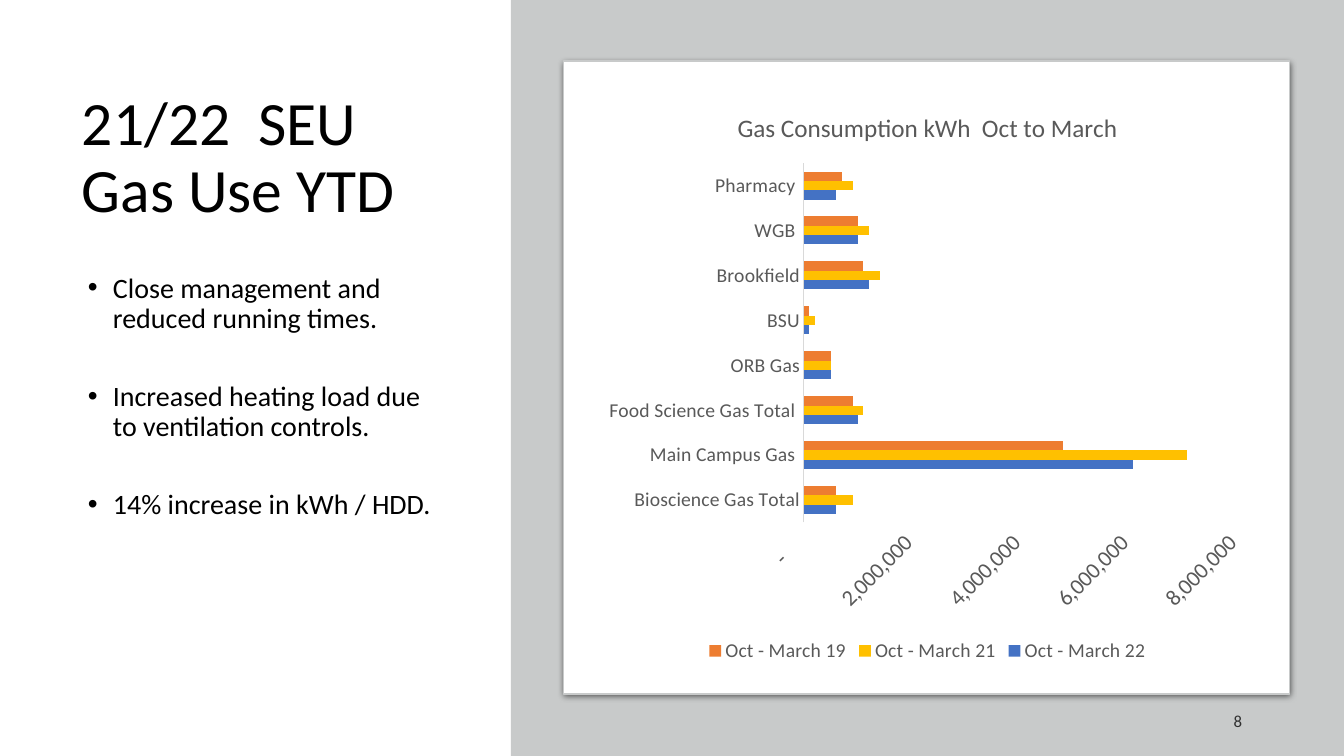
from lxml import etree
from pptx import Presentation
from pptx.chart.data import CategoryChartData
from pptx.dml.color import RGBColor
from pptx.enum.chart import XL_CHART_TYPE as CT, XL_LEGEND_POSITION as LP, XL_TICK_MARK as TM
from pptx.enum.shapes import MSO_SHAPE as MS
from pptx.enum.text import MSO_ANCHOR as MA, PP_ALIGN as PA
from pptx.oxml import parse_xml
from pptx.oxml.ns import nsdecls, qn
from pptx.util import Pt

TITLE = "21/22  SEU Gas Use YTD"
BULLETS = [
    "Close management and reduced running times.",
    "Increased heating load due to ventilation controls.",
    "14% increase in kWh / HDD.",
]
PAGE = "8"
CHART_TITLE = "Gas Consumption kWh  Oct to March"
CATEGORIES = ["Bioscience Gas Total", "Main Campus Gas ", "Food Science Gas Total ",
              "ORB Gas", "BSU", "Brookfield", "WGB ", "Pharmacy "]
SERIES = [
    ("Oct - March 22", "4472C4",
     [600000, 6100000, 1000000, 500000, 100000, 1200000, 1000000, 600000]),
    ("Oct - March 21", "FFC000",
     [900000, 7100000, 1100000, 500000, 200000, 1400000, 1200000, 900000]),
    ("Oct - March 19", "ED7D31",
     [600000, 4800000, 900000, 500000, 100000, 1100000, 1000000, 700000]),
]
NUMBER_FORMAT = '_(* #,##0_);_(* \\(#,##0\\);_(* "-"??_);_(@_)'
FONT, GREY, PANEL, WHITE = "Calibri", "595959", "C8CACA", "FFFFFF"


def px(*lengths):
    return [round(n * 914400 / 100.8) for n in lengths]


def rgb(value):
    return RGBColor.from_string(value)


def set_font(font, size, color):
    font.name, font.size, font.bold = FONT, Pt(size), False
    font.color.rgb = rgb(color)


def add_text(box, lines, size=20, color="000000", align=PA.LEFT, anchor=MA.TOP,
             spacing=1.0, after=0, bullet=None):
    tf = slide.shapes.add_textbox(*px(*box)).text_frame
    tf.word_wrap, tf.vertical_anchor = True, anchor
    for i, line in enumerate(lines):
        p = tf.paragraphs[0] if i == 0 else tf.add_paragraph()
        p.alignment, p.line_spacing, p.space_after = align, spacing, Pt(after)
        r = p.add_run()
        r.text = line
        set_font(r.font, size, color)
        if bullet:
            pPr = p._p.get_or_add_pPr()
            indent, = px(25)
            pPr.set("marL", str(px(31)[0]))
            pPr.set("indent", str(-indent))
            etree.SubElement(pPr, qn("a:buFont")).set("typeface", "Arial")
            etree.SubElement(pPr, qn("a:buChar")).set("char", bullet)


def add_block(kind, box, fill, line=None):
    sp = slide.shapes.add_shape(kind, *px(*box))
    sp.shadow.inherit = False
    sp.fill.solid()
    sp.fill.fore_color.rgb = rgb(fill)
    if line:
        sp.line.color.rgb = rgb(line)
        sp.line.width = Pt(0.75)
    else:
        sp.line.fill.background()
    return sp


def style_axis(axis, size):
    axis.major_tick_mark = axis.minor_tick_mark = TM.NONE
    axis.has_major_gridlines = False
    set_font(axis.tick_labels.font, size, GREY)


prs = Presentation()
prs.slide_width, prs.slide_height = px(1344, 756)
slide = prs.slides.add_slide(prs.slide_layouts[6])

add_text((72, 70, 386, 178), [TITLE], size=44, anchor=MA.MIDDLE, spacing=0.9)
add_text((72, 269, 386, 417), BULLETS, spacing=0.9, after=34, bullet="•")

add_block(MS.RECTANGLE, (511, 0, 833, 756), PANEL)
card = add_block(MS.ROUNDED_RECTANGLE, (564, 61, 726, 633), WHITE, PANEL)
card.adjustments[0] = 0
card._element.spPr.find(qn("a:effectLst")).append(parse_xml(
    f'<a:outerShdw {nsdecls("a")} blurRad="{Pt(4.5)}" dist="{Pt(1.5)}" dir="5400000">'
    '<a:srgbClr val="000000"><a:alpha val="63000"/></a:srgbClr></a:outerShdw>'))
add_text((950, 701, 302, 40), [PAGE], size=12, color="303030", align=PA.RIGHT,
         anchor=MA.MIDDLE, after=6)

data = CategoryChartData(number_format="#,##0")
data.categories = CATEGORIES
for name, _, values in SERIES:
    data.add_series(name, values)
chart = slide.shapes.add_chart(CT.BAR_CLUSTERED, *px(596, 89, 663, 578), data).chart
set_font(chart.font, 10, "000000")

chart.has_title = True
tf = chart.chart_title.text_frame
tf.text = CHART_TITLE
set_font(tf.paragraphs[0].runs[0].font, 18, GREY)
chart.chart_title.include_in_layout = False

plot = chart.plots[0]
plot.gap_width, plot.vary_by_categories = 182, False
for series, (_, color, _) in zip(plot.series, SERIES):
    series.format.fill.solid()
    series.format.fill.fore_color.rgb = rgb(color)

style_axis(chart.category_axis, 14)
chart.category_axis.format.line.color.rgb = rgb("D9D9D9")
chart.category_axis.format.line.width = Pt(0.75)
values_axis = chart.value_axis
style_axis(values_axis, 16)
values_axis.format.line.fill.background()
values_axis.tick_labels.number_format = NUMBER_FORMAT
values_axis.tick_labels.number_format_is_linked = False
values_axis._element.find(qn("c:txPr")).find(qn("a:bodyPr")).set("rot", "-2700000")

chart.has_legend = True
chart.legend.position = LP.BOTTOM
chart.legend.include_in_layout = False
set_font(chart.legend.font, 14, GREY)

prs.save("out.pptx")
